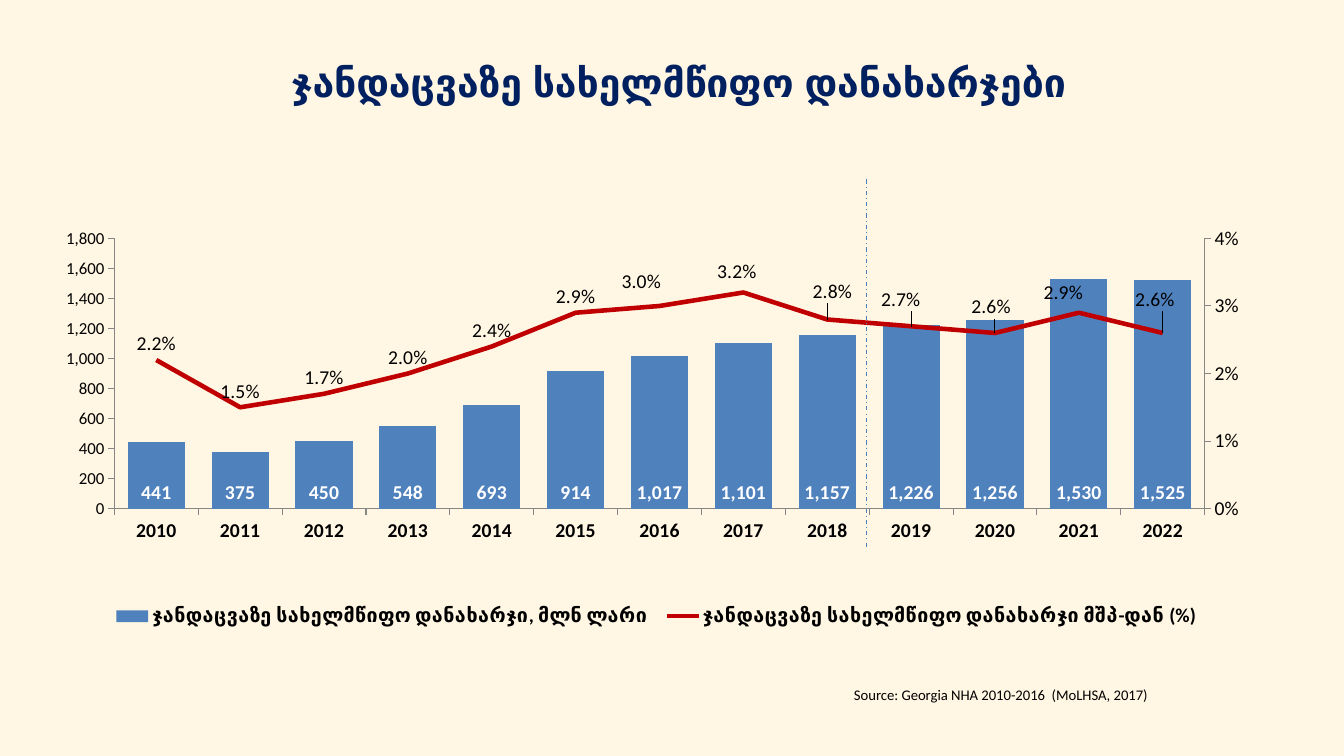
from copy import deepcopy

from lxml.etree import SubElement
from pptx import Presentation
from pptx.chart.axis import ValueAxis
from pptx.chart.data import CategoryChartData
from pptx.dml.color import RGBColor
from pptx.enum.chart import XL_CHART_TYPE as Kind, XL_LABEL_POSITION as Spot
from pptx.enum.chart import XL_LEGEND_POSITION as Side, XL_MARKER_STYLE as Marker, XL_TICK_MARK as Tick
from pptx.enum.dml import MSO_LINE as Dash
from pptx.enum.shapes import MSO_CONNECTOR as Link
from pptx.enum.text import MSO_ANCHOR as Anchor, PP_ALIGN as Align
from pptx.oxml import parse_xml
from pptx.oxml.ns import nsdecls, qn
from pptx.util import Inches, Pt

YEARS = [str(year) for year in range(2010, 2023)]
SPENDING = [441, 375, 450, 548, 693, 914, 1017, 1101, 1157, 1226, 1256, 1530, 1525]
GDP_SHARE = [0.022, 0.015, 0.017, 0.02, 0.024, 0.029, 0.03, 0.032, 0.028, 0.027, 0.026, 0.029, 0.026]
LABEL_SHIFTS = {"2016": (-1.4, -1.8), "2017": (-0.5, -1.1), "2018": (0.4, -2.7), "2019": (-0.8, -2.4),
                "2020": (-0.3, -2.2), "2021": (-1.2, -0.9), "2022": (-0.6, -3.8)}


def color(value):
    return RGBColor.from_string(value)


def apply(target, **values):
    for name, value in values.items():
        setattr(target, name, value)


def chart_layout(**places):
    layout = parse_xml(f"<c:layout {nsdecls('c')}><c:manualLayout/></c:layout>")
    for name, value in places.items():
        SubElement(layout[0], qn(f"c:{name}")).set("val", str(value))
    return layout


class SlideBuilder:
    columns = rows = 100
    colors = {"paper": "FFF6E3", "title": "002060", "text": "000000", "bar": "4F81BD",
              "trend": "C00000", "divider": "4B7EBC", "axis": "868686", "light": "FFFFFF"}

    def __init__(self, deck):
        self.deck = deck
        self.slide = deck.slides.add_slide(deck.slide_layouts[6])
        fill = self.slide.background.fill
        fill.solid()
        fill.fore_color.rgb = color(self.colors["paper"])

    def place(self, left, top, width, height):
        column = self.deck.slide_width / self.columns
        row = self.deck.slide_height / self.rows
        return [round(n * unit) for n, unit in zip((left, top, width, height), (column, row) * 2)]

    def style_font(self, font, shade="text", **values):
        apply(font, **values)
        font.color.rgb = color(self.colors[shade])

    def style_line(self, line, shade, **values):
        line.color.rgb = color(self.colors[shade])
        apply(line, **values)

    def text(self, words, area, anchor=Anchor.TOP, align=Align.LEFT, **font):
        box = self.slide.shapes.add_textbox(*self.place(*area))
        apply(box.text_frame, word_wrap=True, vertical_anchor=anchor)
        para = box.text_frame.paragraphs[0]
        para.alignment = align
        span = para.add_run()
        span.text = words
        self.style_font(span.font, **font)

    def divider(self, column, top, bottom):
        left, top, right, bottom = self.place(column, top, column, bottom)
        line = self.slide.shapes.add_connector(Link.STRAIGHT, left, top, right, bottom)
        self.style_line(line.line, "divider", width=Pt(0.75), dash_style=Dash.DASH_DOT)
        SubElement(line._element.spPr, qn("a:effectLst"))

    def axis(self, axis, size, bold=False):
        apply(axis, has_major_gridlines=False, major_tick_mark=Tick.OUTSIDE, minor_tick_mark=Tick.NONE)
        self.style_line(axis.format.line, "axis", width=Pt(0.75))
        self.style_font(axis.tick_labels.font, size=Pt(size), bold=bold)

    def scale(self, axis, top, step, number_format):
        apply(axis, minimum_scale=0, maximum_scale=top, major_unit=step)
        apply(axis.tick_labels, number_format=number_format, number_format_is_linked=False)

    def labels(self, series, number_format, position, **font):
        labels = series.data_labels
        apply(labels, show_value=True, number_format=number_format,
              number_format_is_linked=False, position=position)
        self.style_font(labels.font, size=Pt(14), **font)

    def second_plot(self, chart):
        area = chart._chartSpace.chart.plotArea
        bars = area.find(qn("c:barChart"))
        share = bars.findall(qn("c:ser"))[1]
        for flag in share.findall(qn("c:invertIfNegative")):
            share.remove(flag)
        lines = parse_xml(f'<c:lineChart {nsdecls("c")}><c:grouping val="standard"/><c:varyColors val="0"/>'
                          '<c:marker val="1"/><c:axId val="501"/><c:axId val="502"/></c:lineChart>')
        lines.insert(2, share)
        bars.addnext(lines)
        for source, own, other in (("c:valAx", "502", "501"), ("c:catAx", "501", "502")):
            axis = deepcopy(area.find(qn(source)))
            axis.find(qn("c:axId")).set("val", own)
            axis.find(qn("c:crossAx")).set("val", other)
            area.findall(qn("c:valAx"))[-1].addnext(axis)
            if source == "c:catAx":
                axis.find(qn("c:delete")).set("val", "1")
            else:
                axis.find(qn("c:axPos")).set("val", "r")
                axis.find(qn("c:crosses")).set("val", "max")
                right = ValueAxis(axis)
        self.axis(right, 14)
        self.scale(right, 0.04, 0.01, "0%")
        return chart.plots[1].series[0]

    def shift_labels(self, series, number_format):
        for year, (across, down) in LABEL_SHIFTS.items():
            label = series.points[YEARS.index(year)].data_label
            self.style_font(label.font, size=Pt(14))
            label.position = Spot.ABOVE
            element = series.data_labels._element.findall(qn("c:dLbl"))[-1]
            layout = chart_layout(x=across / 100, y=down / 100)
            element.find(qn("c:idx")).addnext(layout)
            layout.addnext(parse_xml(
                f'<c:numFmt {nsdecls("c")} formatCode="{number_format}" sourceLinked="0"/>'))

    def spending_chart(self, area):
        data = CategoryChartData()
        data.categories = YEARS
        data.add_series("ჯანდაცვაზე სახელმწიფო დანახარჯი, მლნ ლარი", SPENDING, "#,##0")
        data.add_series("ჯანდაცვაზე სახელმწიფო დანახარჯი მშპ-დან (%)", GDP_SHARE, "0.0%")
        frame = self.slide.shapes.add_chart(Kind.COLUMN_CLUSTERED, *self.place(*area), data)
        chart = frame.chart
        apply(chart, has_title=False, has_legend=True)
        self.style_font(chart.font, size=Pt(18), name="Calibri")
        self.axis(chart.category_axis, 14, bold=True)
        self.axis(chart.value_axis, 12)
        self.scale(chart.value_axis, 1800, 200, "#,##0")

        share = self.second_plot(chart)
        self.style_line(share.format.line, "trend", width=Pt(3.25))
        share.smooth = False
        share.marker.style = Marker.NONE
        self.labels(share, "0.0%", Spot.ABOVE)
        self.shift_labels(share, "0.0%")

        columns = chart.plots[0]
        apply(columns, gap_width=47, overlap=36, vary_by_categories=False)
        bars = columns.series[0]
        bars.format.fill.solid()
        bars.format.fill.fore_color.rgb = color(self.colors["bar"])
        self.labels(bars, "#,##0", Spot.INSIDE_BASE, shade="light", bold=True)

        plot_area = chart._chartSpace.chart.plotArea
        for old in plot_area.findall(qn("c:layout")):
            plot_area.remove(old)
        plot_area.insert(0, chart_layout(layoutTarget="inner", xMode="edge", yMode="edge",
                                         x=0.088, y=0.035, w=0.839, h=0.601))
        legend = chart.legend
        apply(legend, position=Side.BOTTOM, include_in_layout=False)
        self.style_font(legend.font, size=Pt(14), bold=True)
        legend._element.find(qn("c:legendPos")).addnext(
            chart_layout(xMode="edge", yMode="edge", x=0.08, y=0.83, w=0.85, h=0.09))


def main():
    deck = Presentation()
    apply(deck, slide_width=Inches(13.33), slide_height=Inches(7.5))
    page = SlideBuilder(deck)
    page.text("ჯანდაცვაზე სახელმწიფო დანახარჯები", (5.85, 5.6, 89.27, 10.53), Anchor.MIDDLE, Align.CENTER,
              shade="title", size=Pt(28), name="Arial", bold=True)
    page.spending_chart((0, 29.47, 96.7, 59.47))
    page.text("Source: Georgia NHA 2010-2016  (MoLHSA, 2017)", (62.8, 90, 37.2, 3.73),
              size=Pt(10.5), name="Calibri")
    page.divider(64.44, 23.73, 72.4)
    deck.save("out.pptx")


if __name__ == "__main__":
    main()
